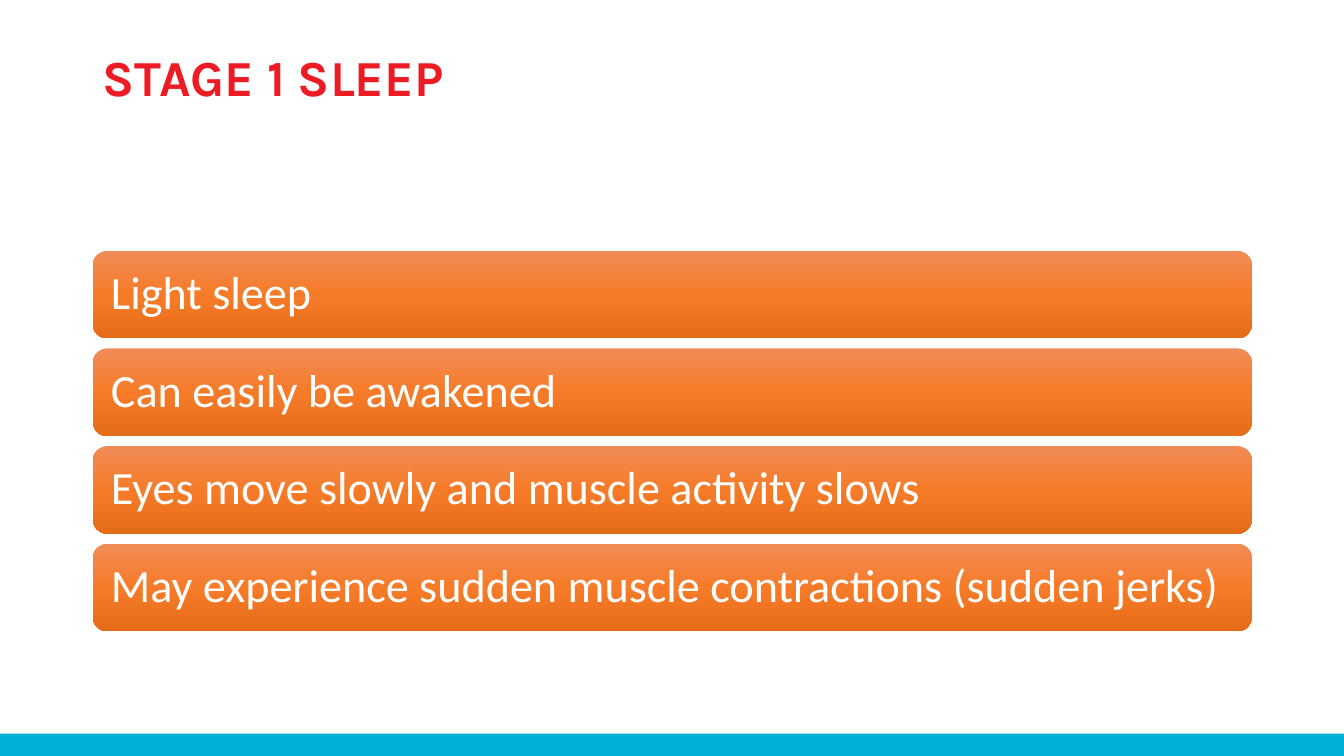
from copy import deepcopy
from dataclasses import dataclass

from pptx import Presentation
from pptx.dml.color import RGBColor as RGB
from pptx.enum.shapes import MSO_SHAPE as Shape
from pptx.enum.text import MSO_ANCHOR as Anchor, PP_ALIGN as Align
from pptx.oxml.ns import qn
from pptx.util import Cm, Pt


@dataclass(frozen=True)
class Theme:
    title: str = "ED1C24"
    text: str = "FFFFFF"
    footer: str = "00B0D7"
    bar: tuple = ((0, "F18C57"), (0.5, "F67B28"), (1, "E56C19"))
    title_font: str = "Karla"
    body_font: str = "Calibri"
    title_size: int = 36
    body_size: int = 33


THEME = Theme()
WIDTH, HEIGHT = 33.87, 19.05
LEFT, CONTENT_WIDTH = 2.34, 29.21
BAR_TOP, BAR_HEIGHT, BAR_PITCH = 6.32, 2.21, 2.46
FOOTER_HEIGHT = 0.56
FACTS = (
    "Light sleep",
    "Can easily be awakened",
    "Eyes move slowly and muscle activity slows",
    "May experience sudden muscle contractions (sudden jerks)",
)


def write(sp, text, *, font, size, color, bold=False, inset=(0.25, 0.13)):
    tf = sp.text_frame
    tf.word_wrap = True
    tf.vertical_anchor = Anchor.MIDDLE
    tf.margin_left = tf.margin_right = Cm(inset[0])
    tf.margin_top = tf.margin_bottom = Cm(inset[1])
    p = tf.paragraphs[0]
    p.alignment = Align.LEFT
    p.line_spacing = 0.9
    r = p.add_run()
    r.text = text
    r.font.name = font
    r.font.size = Pt(size)
    r.font.bold = bold
    r.font.color.rgb = RGB.from_string(color)


def add_plain_shape(s, kind, left, top, width, height):
    """Add a preset shape without outline or shadow."""
    sp = s.shapes.add_shape(kind, Cm(left), Cm(top), Cm(width), Cm(height))
    sp.shadow.inherit = False
    sp.line.fill.background()
    return sp


def fill_gradient(sp, stops):
    """Fill from top to bottom with three (position, colour) stops."""
    sp.fill.gradient()
    sp.fill.gradient_angle = 270
    stop_list = sp.fill._xPr.find(qn("a:gradFill")).find(qn("a:gsLst"))
    stop_list.append(deepcopy(stop_list[0]))
    for stop, (position, color) in zip(sp.fill.gradient_stops, stops):
        stop.position = position
        stop.color.rgb = RGB.from_string(color)


def add_footer(s):
    sp = add_plain_shape(s, Shape.RECTANGLE, 0, HEIGHT - FOOTER_HEIGHT,
                         WIDTH, FOOTER_HEIGHT)
    sp.fill.solid()
    sp.fill.fore_color.rgb = RGB.from_string(THEME.footer)


def add_title(s, text):
    sp = s.shapes.add_textbox(Cm(LEFT), Cm(1.02), Cm(CONTENT_WIDTH), Cm(1.98))
    write(sp, text, font=THEME.title_font, size=THEME.title_size,
          color=THEME.title, bold=True)


def add_bar(s, top, text):
    sp = add_plain_shape(s, Shape.ROUNDED_RECTANGLE, LEFT, top,
                         CONTENT_WIDTH, BAR_HEIGHT)
    fill_gradient(sp, THEME.bar)
    write(sp, text, font=THEME.body_font, size=THEME.body_size,
          color=THEME.text, inset=(0.35, 0.35))


def main():
    prs = Presentation()
    prs.slide_width, prs.slide_height = Cm(WIDTH), Cm(HEIGHT)
    s = prs.slides.add_slide(prs.slide_layouts[6])
    add_footer(s)
    add_title(s, "STAGE 1 SLEEP")
    for i, fact in enumerate(FACTS):
        add_bar(s, BAR_TOP + i * BAR_PITCH, fact)
    prs.save("out.pptx")


if __name__ == "__main__":
    main()
